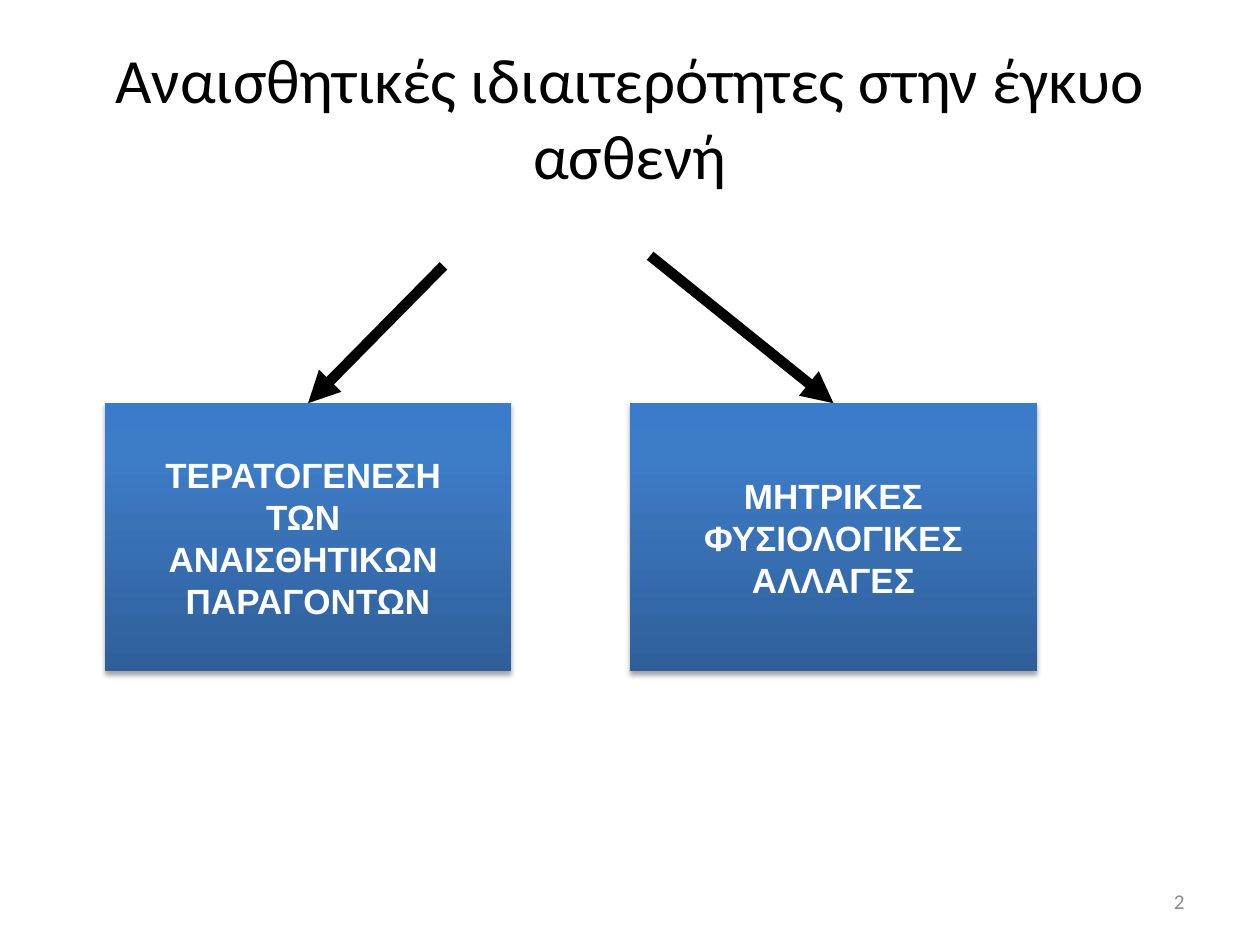
from dataclasses import dataclass

from pptx import Presentation
from pptx.dml.color import RGBColor
from pptx.enum.shapes import MSO_CONNECTOR, MSO_SHAPE
from pptx.enum.text import MSO_ANCHOR, MSO_AUTO_SIZE, PP_ALIGN
from pptx.oxml import parse_xml
from pptx.oxml.ns import nsdecls
from pptx.shapes.base import BaseShape
from pptx.slide import Slide
from pptx.text.text import TextFrame
from pptx.util import Pt

NS = nsdecls("a")
TOP, WIDE, HIGH = 230.4, 232.56, 153.36
STOPS = ((0, "2F5F99"), (80, "3D7CC7"), (100, "3A7CCB"))


@dataclass
class Cause:
    """One box and the point its arrow starts from."""
    text: str
    left: float
    tail: tuple[float, float]


CAUSES = (
    Cause("ΤΕΡΑΤΟΓΕΝΕΣΗ \nΤΩΝ \nΑΝΑΙΣΘΗΤΙΚΩΝ \nΠΑΡΑΓΟΝΤΩΝ", 59.76, (253.44, 151.92)),
    Cause("ΜΗΤΡΙΚΕΣ\nΦΥΣΙΟΛΟΓΙΚΕΣ\nΑΛΛΑΓΕΣ", 360, (371.52, 146.16)),
)


def tint(color: str) -> RGBColor:
    """Turn a hex string into a colour."""
    return RGBColor.from_string(color)


def place(shape: BaseShape, left: float, top: float, wide: float, high: float) -> None:
    """Move and size a shape."""
    shape.left, shape.top = Pt(left), Pt(top)
    shape.width, shape.height = Pt(wide), Pt(high)


def write(frame: TextFrame, text: str, font: str, size: float, color: str,
          align: PP_ALIGN = PP_ALIGN.CENTER, bold: bool = False, wrap: bool = True) -> None:
    """Fill a text frame and format its runs."""
    frame.text = text
    frame.auto_size = MSO_AUTO_SIZE.NONE
    frame.word_wrap = wrap
    frame.vertical_anchor = MSO_ANCHOR.MIDDLE
    for para in frame.paragraphs:
        para.alignment = align
        for run in para.runs:
            run.font.name, run.font.size, run.font.bold = font, Pt(size), bold
            run.font.color.rgb = tint(color)


def draw_box(slide: Slide, cause: Cause) -> None:
    """Draw a shaded box with its label."""
    box = slide.shapes.add_shape(MSO_SHAPE.RECTANGLE, Pt(cause.left), Pt(TOP), Pt(WIDE), Pt(HIGH))
    box.line.fill.background()
    stops = "".join(f'<a:gs pos="{pos * 1000}"><a:srgbClr val="{color}"/></a:gs>'
                    for pos, color in STOPS)
    props = box.element.spPr
    props.insert(2, parse_xml(
        f'<a:gradFill {NS} rotWithShape="1"><a:gsLst>{stops}</a:gsLst>'
        '<a:lin ang="16200000" scaled="0"/></a:gradFill>'))
    props.append(parse_xml(
        f'<a:effectLst {NS}><a:outerShdw blurRad="{Pt(3.1)}" dist="{Pt(1.8)}" dir="5400000" '
        'rotWithShape="0"><a:srgbClr val="000000"><a:alpha val="35000"/></a:srgbClr>'
        '</a:outerShdw></a:effectLst>'))
    write(box.text_frame, cause.text, "Arial", 20, "FFFFFF", bold=True, wrap=False)


def draw_arrow(slide: Slide, cause: Cause) -> None:
    """Draw an arrow to the top centre of a box."""
    start_x, start_y = cause.tail
    arrow = slide.shapes.add_connector(
        MSO_CONNECTOR.STRAIGHT, Pt(start_x), Pt(start_y), Pt(cause.left + WIDE / 2), Pt(TOP))
    arrow.line.width = Pt(6)
    arrow.line.color.rgb = tint("000000")
    arrow.line._get_or_add_ln().append(parse_xml(f'<a:tailEnd {NS} type="triangle"/>'))
    arrow.element.spPr.append(parse_xml(f"<a:effectLst {NS}/>"))


def main() -> None:
    """Build and save the slide."""
    deck = Presentation()
    deck.slide_width, deck.slide_height = Pt(720), Pt(540)
    slide = deck.slides.add_slide(deck.slide_layouts[5])
    title = slide.shapes.title
    place(title, 36, 21.6, 648, 90)
    write(title.text_frame, "Αναισθητικές ιδιαιτερότητες στην έγκυο ασθενή", "Calibri", 36, "000000")
    number = slide.shapes.add_textbox(Pt(516), Pt(500.5), Pt(168), Pt(28.75))
    write(number.text_frame, "2", "Calibri", 12, "8C8C8C", PP_ALIGN.RIGHT)
    for cause in CAUSES:
        draw_box(slide, cause)
        draw_arrow(slide, cause)
    deck.save("out.pptx")


if __name__ == "__main__":
    main()
